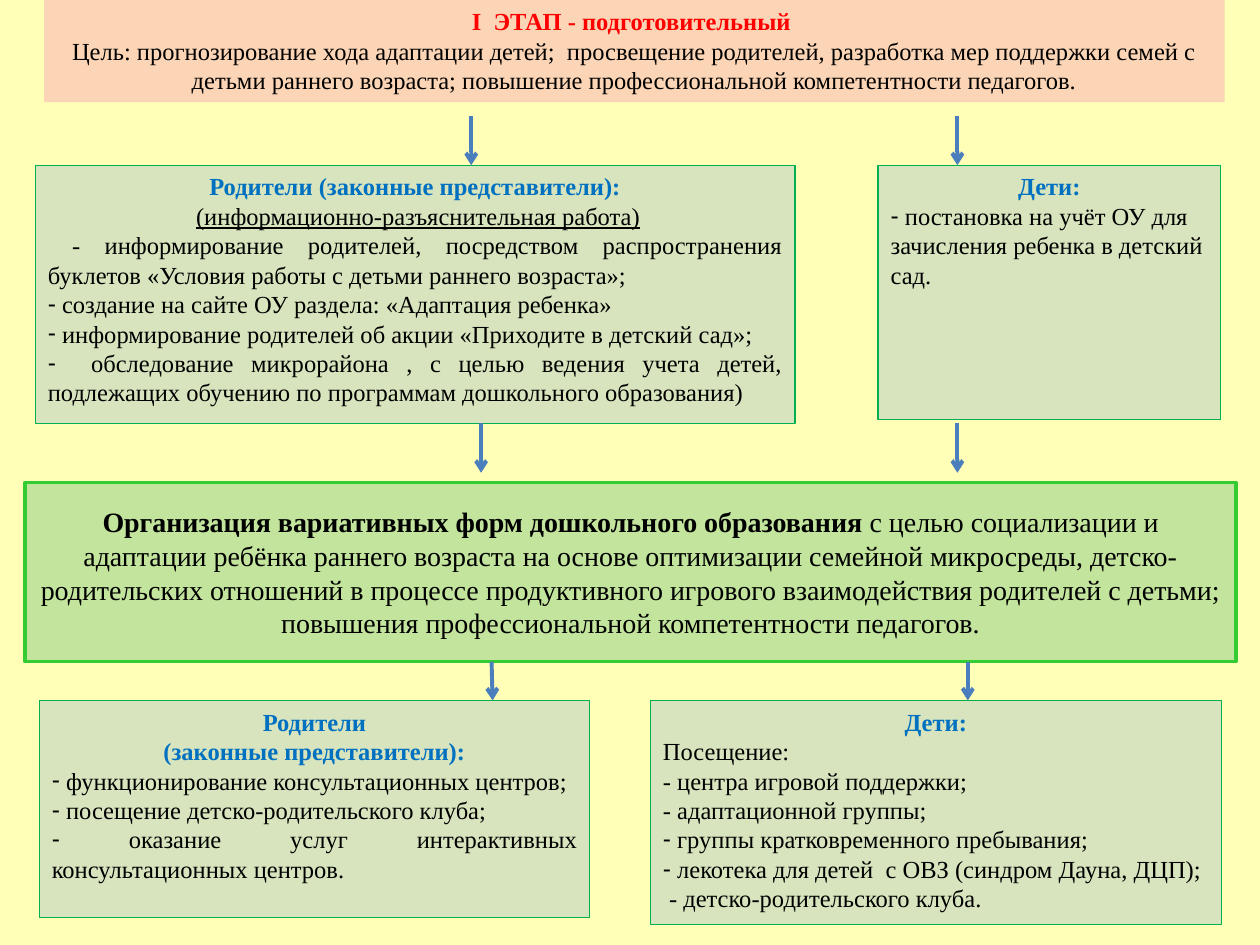
from dataclasses import dataclass

from lxml.etree import SubElement
from pptx import Presentation
from pptx.dml.color import RGBColor
from pptx.enum.shapes import MSO_CONNECTOR, MSO_SHAPE
from pptx.enum.text import MSO_ANCHOR, MSO_AUTO_SIZE, PP_ALIGN
from pptx.oxml.ns import qn
from pptx.util import Cm, Pt

COLORS = {
    "page": "FFFFB8", "peach": "FBD5B5", "olive": "D7E4BD", "lime": "C2E49C",
    "border": "00B050", "bright": "33CC33", "arrow": "4B7EBC",
    "red": "FF0000", "blue": "0070C0", "black": "000000",
}
FONT = "Times New Roman"
C, J, L = PP_ALIGN.CENTER, PP_ALIGN.JUSTIFY, PP_ALIGN.LEFT


@dataclass
class Para:
    text: str
    align: PP_ALIGN = J
    color: str = "black"
    bold: bool = False
    underline: bool = False
    bullet: bool = False
    lead: str = ""  # bold opening words


@dataclass
class Box:
    left: float
    top: float
    width: float
    height: float
    paras: list[Para]
    fill: str = "olive"
    line: str | None = "border"
    line_pt: float = 0.75
    size: int = 14
    anchor: MSO_ANCHOR = MSO_ANCHOR.TOP


@dataclass
class Arrow:
    x1: float
    x2: float
    top: float
    bottom: float


def head(text: str, color: str = "blue") -> Para:
    return Para(text, C, color, bold=True)


def item(text: str, align: PP_ALIGN = J) -> Para:
    return Para(text, align, bullet=True)


def rgb(name: str) -> RGBColor:
    return RGBColor.from_string(COLORS[name])


def add_run(p, text: str, size: int, color: str, bold: bool, underline: bool) -> None:
    r = p.add_run()
    r.text = text
    formats = {"name": FONT, "size": Pt(size), "bold": bold, "underline": underline}
    for key, value in formats.items():
        setattr(r.font, key, value)
    r.font.color.rgb = rgb(color)


def write_para(p, para: Para, size: int) -> None:
    formats = {"alignment": para.align, "space_before": Pt(0), "space_after": Pt(0)}
    for key, value in formats.items():
        setattr(p, key, value)
    pPr = p._p.get_or_add_pPr()
    pPr.set("marL", "0")
    pPr.set("indent", "0")
    if para.bullet:
        SubElement(pPr, qn("a:buFontTx"))
        SubElement(pPr, qn("a:buChar"), char="-")
    else:
        SubElement(pPr, qn("a:buNone"))
    if para.lead:
        add_run(p, para.lead, size, para.color, True, False)
    add_run(p, para.text, size, para.color, para.bold, para.underline)


def draw_box(sp, box: Box) -> None:
    for key in ("left", "top", "width", "height"):
        setattr(sp, key, Cm(getattr(box, key)))
    sp.fill.solid()
    sp.fill.fore_color.rgb = rgb(box.fill)
    if box.line:
        sp.line.color.rgb = rgb(box.line)
        sp.line.width = Pt(box.line_pt)
    tf = sp.text_frame
    formats = {"word_wrap": True, "auto_size": MSO_AUTO_SIZE.NONE,
               "vertical_anchor": box.anchor}
    for key, value in formats.items():
        setattr(tf, key, value)
    for i, para in enumerate(box.paras):
        write_para(tf.add_paragraph() if i else tf.paragraphs[0], para, box.size)


def draw_arrow(s, a: Arrow) -> None:
    cx = s.shapes.add_connector(MSO_CONNECTOR.STRAIGHT,
                                Cm(a.x1), Cm(a.top), Cm(a.x2), Cm(a.bottom))
    cx.line.color.rgb = rgb("arrow")
    cx.line.width = Pt(2.25)
    SubElement(cx.line._get_or_add_ln(), qn("a:tailEnd"), type="arrow")
    SubElement(cx._element.spPr, qn("a:effectLst"))


STAGE = Box(0.89, 0, 23.8, 2.06, [
    head("I  ЭТАП - подготовительный ", "red"),
    Para("Цель: прогнозирование хода адаптации детей;  просвещение родителей, "
         "разработка мер поддержки семей с детьми раннего возраста; повышение "
         "профессиональной компетентности педагогов.", C),
], fill="peach", line=None)

# Lists in the order of the layout's body placeholders
LISTS = [
    Box(0.71, 3.33, 15.32, 5.21, [
        head("Родители (законные представители):"),
        Para("(информационно-разъяснительная работа)", C, underline=True, lead=" "),
        Para(" - информирование родителей, посредством распространения буклетов "
             "«Условия работы с детьми раннего возраста»;"),
        item(" создание на сайте ОУ раздела: «Адаптация ребенка»"),
        item(" информирование родителей об акции «Приходите в детский сад»;"),
        item("  обследование микрорайона , с целью ведения учета детей, "
             "подлежащих обучению по программам дошкольного образования)"),
    ]),
    Box(17.7, 3.33, 6.91, 5.13, [
        head("Дети:"),
        item(" постановка на учёт ОУ для зачисления ребенка в детский сад.", L),
    ]),
    Box(0.79, 14.12, 11.1, 4.37, [
        head("Родители"),
        head("(законные представители):"),
        item(" функционирование консультационных центров;"),
        item(" посещение детско-родительского клуба;"),
        item(" оказание услуг интерактивных консультационных центров."),
    ]),
    Box(13.11, 14.12, 11.51, 4.52, [
        head("Дети:"),
        Para("Посещение:", L),
        Para("- центра игровой поддержки;", L),
        Para("- адаптационной группы;"),
        item(" группы кратковременного пребывания;"),
        item(" лекотека для детей  с ОВЗ (синдром Дауна, ДЦП);"),
        Para(" - детско-родительского клуба."),
    ]),
]

FORMS = Box(0.51, 9.73, 24.41, 3.61, [
    Para("с целью социализации и адаптации ребёнка раннего возраста на основе "
         "оптимизации семейной микросреды, детско-родительских отношений в процессе "
         "продуктивного игрового взаимодействия родителей с детьми; повышения "
         "профессиональной компетентности педагогов.", C,
         lead="Организация вариативных форм дошкольного образования "),
], fill="lime", line="bright", line_pt=2, size=16, anchor=MSO_ANCHOR.MIDDLE)

ARROWS = [
    Arrow(9.5, 9.5, 2.34, 3.33), Arrow(19.3, 19.3, 2.34, 3.33),
    Arrow(9.7, 9.7, 8.53, 9.53), Arrow(19.3, 19.3, 8.53, 9.53),
    Arrow(9.91, 9.93, 13.34, 14.12), Arrow(19.51, 19.51, 13.34, 14.12),
]


def main() -> None:
    prs = Presentation()
    prs.slide_width, prs.slide_height = Cm(25.4), Cm(19.05)
    s = prs.slides.add_slide(prs.slide_layouts.get_by_name("Comparison"))
    s.background.fill.solid()
    s.background.fill.fore_color.rgb = rgb("page")

    # Stage title and the four lists
    draw_box(s.shapes.title, STAGE)
    for idx, box in enumerate(LISTS, start=1):
        draw_box(s.placeholders[idx], box)

    # Central panel
    panel = s.shapes.add_shape(MSO_SHAPE.RECTANGLE, 0, 0, 0, 0)
    panel.shadow.inherit = False
    draw_box(panel, FORMS)

    # Flow arrows
    for arrow in ARROWS:
        draw_arrow(s, arrow)

    prs.save("out.pptx")


if __name__ == "__main__":
    main()
